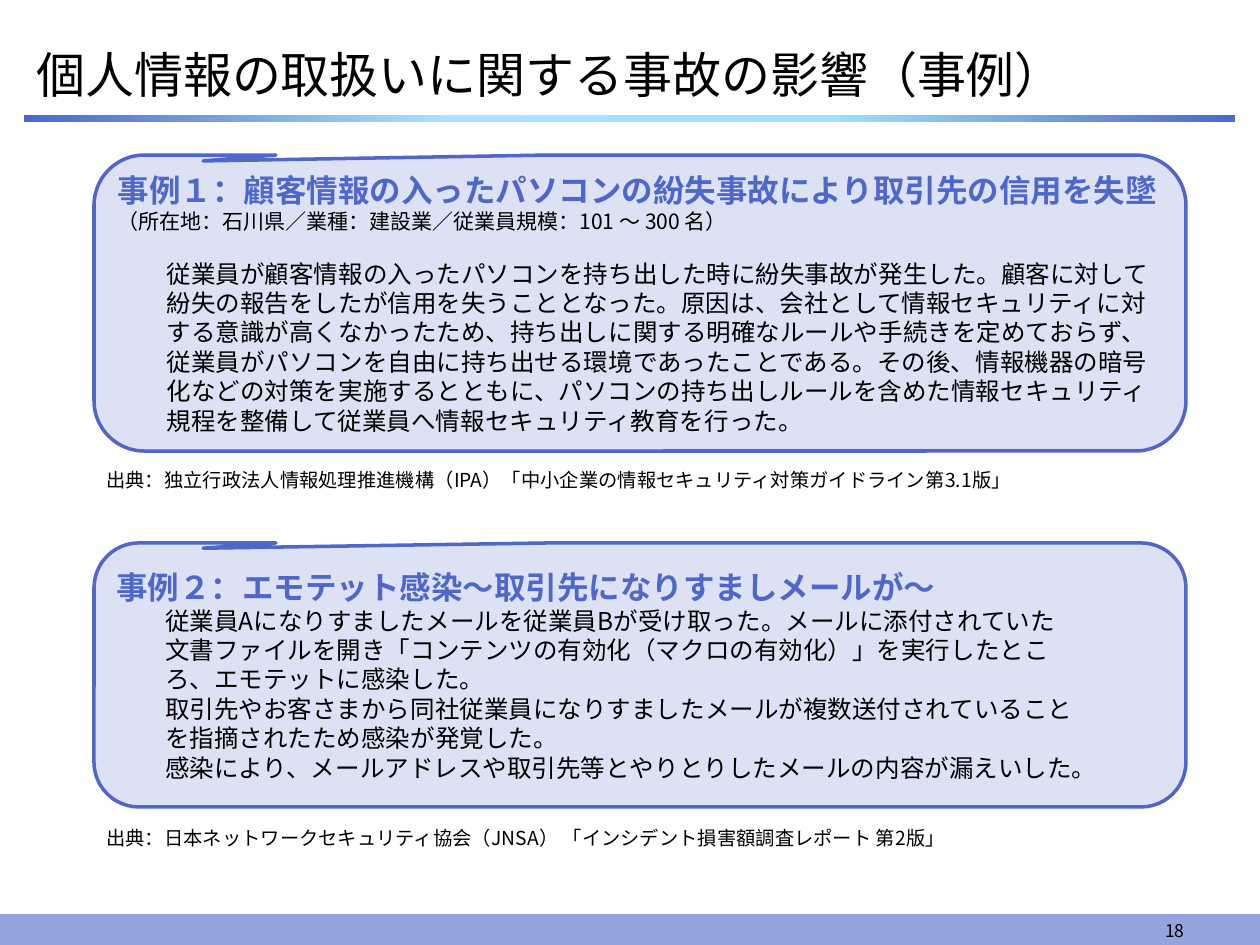
from copy import deepcopy

from pptx import Presentation
from pptx.dml.color import RGBColor
from pptx.enum.shapes import MSO_SHAPE as Shape
from pptx.enum.text import MSO_ANCHOR as Anchor, PP_ALIGN as Align
from pptx.oxml.ns import qn
from pptx.util import Emu, Pt

FONT = "Noto Sans CJK JP"
COLORS = {
    "black": "000000",
    "blue": "4E67C8",
    "footer": "95A4DE",
    "panel": "DCE1F4",
    "sky": "A9E3F8",
    "pale_sky": "9EE0F7",
}


def px(length):
    return Emu(round(length * 914400 / 126))


def add_text(paragraph, text, size=14, color="black", bold=False, align=Align.LEFT, indent=0, before=0):
    paragraph.alignment = align
    paragraph.space_before = Pt(before)
    properties = paragraph._p.get_or_add_pPr()
    properties.set("marL", str(px(indent)))
    properties.set("indent", "0")
    run = paragraph.add_run()
    run.text = text
    run.font.size = Pt(size)
    run.font.bold = bold
    run.font.name = FONT
    run.font.color.rgb = RGBColor.from_string(COLORS[color])
    east_asian = run._r.get_or_add_rPr().makeelement(qn("a:ea"), {"typeface": FONT})
    run.font._element.find(qn("a:latin")).addnext(east_asian)


presentation = Presentation()
presentation.slide_width = px(1260)
presentation.slide_height = px(945)
slide = presentation.slides.add_slide(presentation.slide_layouts[6])

footer = slide.shapes.add_shape(Shape.RECTANGLE, px(0), px(915), px(1260), px(30))
footer.shadow.inherit = False
footer.fill.solid()
footer.fill.fore_color.rgb = RGBColor.from_string(COLORS["footer"])
footer.line.color.rgb = RGBColor.from_string(COLORS["footer"])
footer.line.width = Pt(0.75)

rule = slide.shapes.add_shape(Shape.RECTANGLE, px(24), px(115), px(1211), px(7))
rule.shadow.inherit = False
rule.line.fill.background()
rule.fill.gradient()
rule.fill.gradient_angle = 0
stop_list = rule._element.spPr.find(qn("a:gradFill")).find(qn("a:gsLst"))
for _ in range(2):
    stop_list.append(deepcopy(stop_list[0]))
stops = [(0, "blue"), (0.35, "sky"), (0.67, "pale_sky"), (1, "blue")]
for stop, (position, color) in zip(rule.fill.gradient_stops, stops):
    stop.position = position
    stop.color.rgb = RGBColor.from_string(COLORS[color])

labels = [
    ("個人情報の取扱いに関する事故の影響（事例）", 24, 33, 1211, 82, 28, Align.LEFT, Anchor.MIDDLE),
    ("18", 903, 908, 294, 39, 10, Align.RIGHT, Anchor.BOTTOM),
    ("出典：独立行政法人情報処理推進機構（IPA）「中小企業の情報セキュリティ対策ガイドライン第3.1版」",
     94, 462, 999, 36, 11, Align.LEFT, Anchor.TOP),
    ("出典：日本ネットワークセキュリティ協会（JNSA） 「インシデント損害額調査レポート 第2版」",
     94, 820, 999, 36, 11, Align.LEFT, Anchor.TOP),
]
for text, left, top, width, height, size, align, anchor in labels:
    frame = slide.shapes.add_textbox(px(left), px(top), px(width), px(height)).text_frame
    frame.word_wrap = True
    frame.vertical_anchor = anchor
    add_text(frame.paragraphs[0], text, size=size, align=align)

cases = [
    (155, 296, "事例１：顧客情報の入ったパソコンの紛失事故により取引先の信用を失墜",
     "（所在地：石川県／業種：建設業／従業員規模：101 ～ 300 名）", 14, [
         "従業員が顧客情報の入ったパソコンを持ち出した時に紛失事故が発生した。"
         "顧客に対して紛失の報告をしたが信用を失うこととなった。"
         "原因は、会社として情報セキュリティに対する意識が高くなかったため、"
         "持ち出しに関する明確なルールや手続きを定めておらず、"
         "従業員がパソコンを自由に持ち出せる環境であったことである。"
         "その後、情報機器の暗号化などの対策を実施するとともに、"
         "パソコンの持ち出しルールを含めた情報セキュリティ規程を整備して"
         "従業員へ情報セキュリティ教育を行った。",
     ]),
    (543, 264, "事例２：エモテット感染～取引先になりすましメールが～", "", 0, [
        "従業員Aになりすましたメールを従業員Bが受け取った。メールに添付されていた",
        "文書ファイルを開き「コンテンツの有効化（マクロの有効化）」を実行したとこ",
        "ろ、エモテットに感染した。",
        "取引先やお客さまから同社従業員になりすましたメールが複数送付されていること",
        "を指摘されたため感染が発覚した。",
        "感染により、メールアドレスや取引先等とやりとりしたメールの内容が漏えいした。",
    ]),
]
for top, height, heading, detail, gap, body in cases:
    panel = slide.shapes.add_shape(Shape.ROUNDED_RECTANGULAR_CALLOUT, px(94), px(top), px(1092), px(height))
    panel.shadow.inherit = False
    for index, value in enumerate((-0.4, -0.48, 0.17)):
        panel.adjustments[index] = value
    panel.fill.solid()
    panel.fill.fore_color.rgb = RGBColor.from_string(COLORS["panel"])
    panel.line.color.rgb = RGBColor.from_string(COLORS["blue"])
    panel.line.width = Pt(2)
    frame = panel.text_frame
    frame.word_wrap = True
    frame.vertical_anchor = Anchor.MIDDLE
    frame.margin_left = frame.margin_right = px(9)
    frame.margin_top = frame.margin_bottom = px(1)
    add_text(frame.paragraphs[0], heading, size=18, color="blue", bold=True)
    if detail:
        add_text(frame.paragraphs[0], detail, size=12)
    for text in body:
        add_text(frame.add_paragraph(), text, indent=49, before=gap)

presentation.save("out.pptx")
